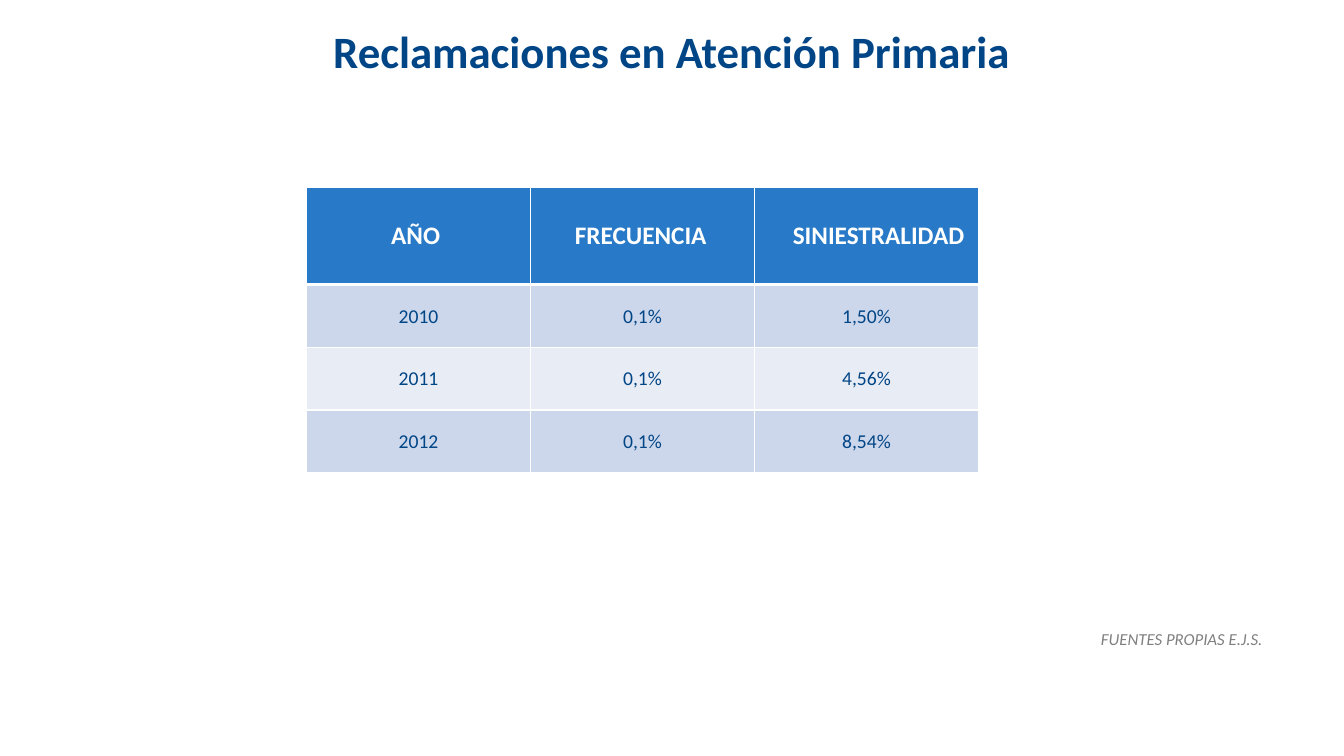
from dataclasses import dataclass

from lxml import etree
from pptx import Presentation
from pptx.dml.color import RGBColor
from pptx.enum.text import MSO_ANCHOR, PP_ALIGN
from pptx.oxml.ns import qn
from pptx.util import Inches, Pt

MIDDLE, TOP = MSO_ANCHOR.MIDDLE, MSO_ANCHOR.TOP
LEFT, CENTER, RIGHT = PP_ALIGN.LEFT, PP_ALIGN.CENTER, PP_ALIGN.RIGHT


@dataclass(frozen=True)
class Theme:
    font: str = "Calibri"
    navy: str = "004586"
    blue: str = "287AC8"
    white: str = "FFFFFF"
    gray: str = "808080"
    bands: tuple = ("CDD7EB", "E8ECF5")
    title_size: int = 32
    header_size: int = 18
    body_size: int = 14
    source_size: int = 12
    rule: int = 1
    header_rule: int = 3


THEME = Theme()
SLIDE_W, SLIDE_H = 13.33, 7.5
HEADER_SHARE = 0.34  # of the table's height
VALUE_MARGIN = 0.01

# Each heading with its left indent in inches
HEADINGS = [("AÑO", 0.84), ("FRECUENCIA", 0.44), ("SINIESTRALIDAD", 0.38)]
CLAIMS = [
    ("2010", "0,1%", "1,50%"),
    ("2011", "0,1%", "4,56%"),
    ("2012", "0,1%", "8,54%"),
]


def style(paragraph, size, color, align, bold=False, italic=False):
    paragraph.alignment = align
    font = paragraph.font
    font.name, font.size = THEME.font, Pt(size)
    font.bold, font.italic = bold, italic
    font.color.rgb = RGBColor.from_string(color)


def add_text(slide, box, text, anchor, right_margin=0.1, **look):
    frame = slide.shapes.add_textbox(*map(Inches, box)).text_frame
    frame.word_wrap = True
    frame.vertical_anchor = anchor
    frame.margin_right = Inches(right_margin)
    frame.text = text
    style(frame.paragraphs[0], **look)


def set_borders(cell, top, bottom):
    properties = cell._tc.get_or_add_tcPr()
    widths = {"L": THEME.rule, "R": THEME.rule, "T": top, "B": bottom}
    for side, width in widths.items():
        line = etree.SubElement(properties, qn(f"a:ln{side}"), w=str(Pt(width)))
        fill = etree.SubElement(line, qn("a:solidFill"))
        etree.SubElement(fill, qn("a:srgbClr"), val=THEME.white)


def fill_cell(cell, text, background, top=THEME.rule, bottom=THEME.rule, **look):
    set_borders(cell, top, bottom)
    cell.fill.solid()
    cell.fill.fore_color.rgb = RGBColor.from_string(background)
    cell.vertical_anchor = MIDDLE
    cell.text = text
    style(cell.text_frame.paragraphs[0], **look)


def add_header_row(table):
    for col, (heading, indent) in enumerate(HEADINGS):
        cell = table.cell(0, col)
        cell.margin_left = Inches(indent)
        fill_cell(cell, heading, THEME.blue, bottom=THEME.header_rule,
                  size=THEME.header_size, color=THEME.white, align=LEFT, bold=True)


def add_claim_rows(table):
    for row, claim in enumerate(CLAIMS, start=1):
        band = THEME.bands[(row - 1) % len(THEME.bands)]
        top_rule = THEME.header_rule if row == 1 else THEME.rule
        for col, value in enumerate(claim):
            cell = table.cell(row, col)
            cell.margin_left = cell.margin_right = Inches(VALUE_MARGIN)
            cell.margin_top, cell.margin_bottom = Inches(VALUE_MARGIN), 0
            fill_cell(cell, value, band, top=top_rule,
                      size=THEME.body_size, color=THEME.navy, align=CENTER)


def add_claims_table(slide, box):
    left, top, width, height = map(Inches, box)
    table = slide.shapes.add_table(
        len(CLAIMS) + 1, len(HEADINGS), left, top, width, height).table

    # Equal columns; a taller header above equal rows
    for column in table.columns:
        column.width = int(width / len(HEADINGS))
    header_height = int(height * HEADER_SHARE)
    for row in table.rows:
        row.height = int((height - header_height) / len(CLAIMS))
    table.rows[0].height = header_height

    add_header_row(table)
    add_claim_rows(table)


def add_title(slide, box):
    add_text(slide, box, "Reclamaciones en Atención Primaria", MIDDLE,
             size=THEME.title_size, color=THEME.navy, align=CENTER, bold=True)


def add_source(slide, box):
    add_text(slide, box, "FUENTES PROPIAS E.J.S.", TOP, right_margin=0.14,
             size=THEME.source_size, color=THEME.gray, align=RIGHT, italic=True)


def build_claims_slide(presentation):
    slide = presentation.slides.add_slide(presentation.slide_layouts[6])
    add_source(slide, (0, SLIDE_H * 0.825, SLIDE_W * 0.95, 0.32))
    add_title(slide, (SLIDE_W * 0.05, 0.17, SLIDE_W * 0.9, 0.66))
    add_claims_table(slide, (3.04, 1.86, SLIDE_W / 2, 2.83))


def main():
    presentation = Presentation()
    presentation.slide_width = Inches(SLIDE_W)
    presentation.slide_height = Inches(SLIDE_H)
    build_claims_slide(presentation)
    presentation.save("out.pptx")


if __name__ == "__main__":
    main()
